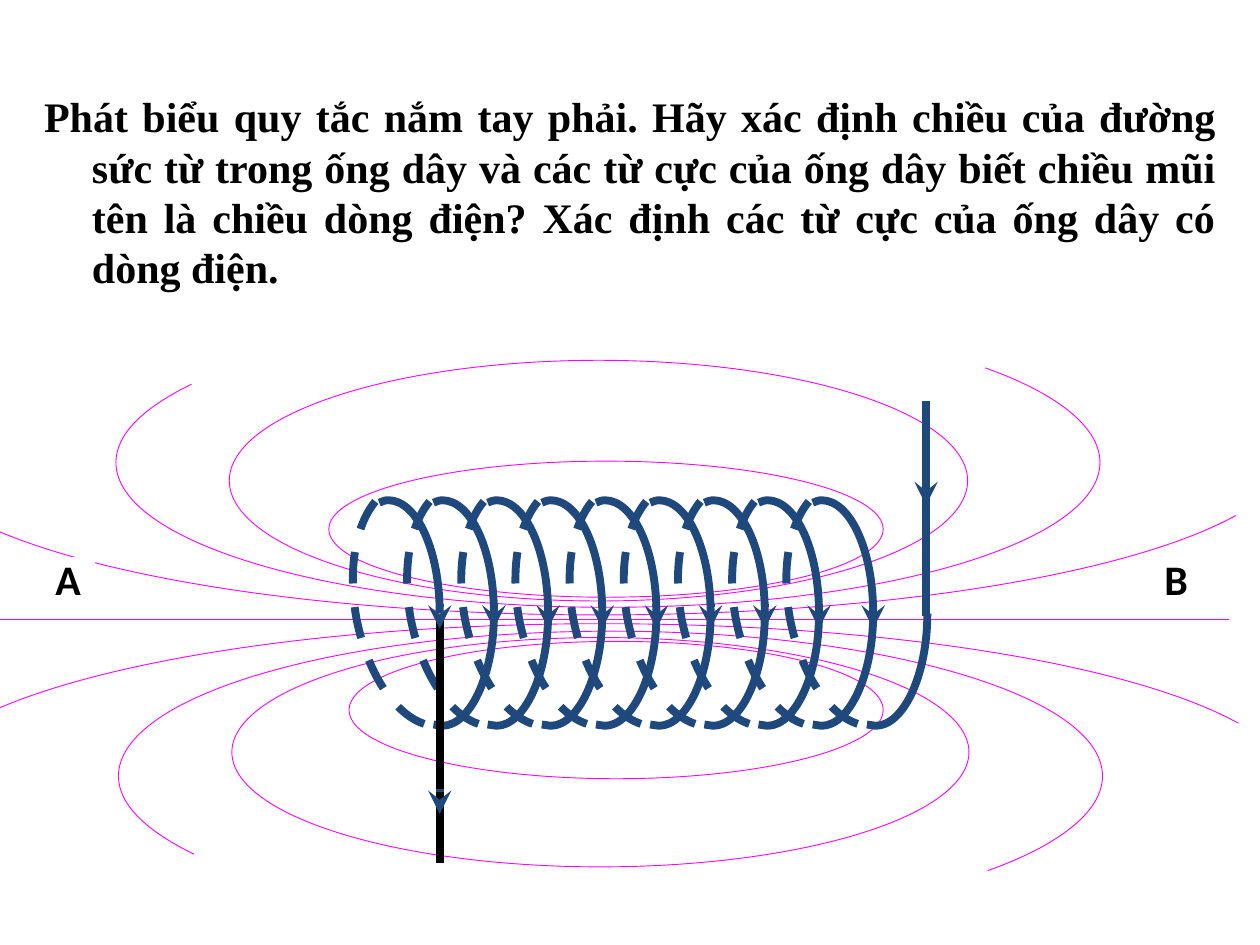
from dataclasses import dataclass

from lxml.etree import SubElement
from pptx import Presentation
from pptx.dml.color import RGBColor
from pptx.enum.dml import MSO_LINE
from pptx.enum.shapes import MSO_CONNECTOR, MSO_SHAPE
from pptx.enum.text import MSO_ANCHOR, MSO_AUTO_SIZE, PP_ALIGN
from pptx.oxml.ns import qn
from pptx.util import Inches, Pt


@dataclass(frozen=True)
class Theme:
    field: RGBColor = RGBColor(0xFF, 0x00, 0xFF)
    coil: RGBColor = RGBColor(0x1F, 0x49, 0x7D)
    black: RGBColor = RGBColor(0, 0, 0)
    white: RGBColor = RGBColor(0xFF, 0xFF, 0xFF)
    field_width: float = 0.5
    coil_width: float = 4.5
    label_width: float = 0.75
    text_size: int = 24
    question_font: str = "Times New Roman"
    label_font: str = "Calibri"


THEME = Theme()
QUESTION = (
    "Phát biểu quy tắc nắm tay phải. Hãy xác định chiều của đường sức từ "
    "trong ống dây và các từ cực của ống dây biết chiều mũi tên là chiều "
    "dòng điện? Xác định các từ cực của ống dây có dòng điện."
)

# Field curves above the axis: a start point, then three points per Bezier
FIELD_CURVES = [
    [(9.81, 4.09), (8.94, 4.57), (6.96, 4.88), (4.76, 4.88),
     (2.67, 4.88), (0.77, 4.6), (-0.16, 4.15)],
    [(7.82, 2.92), (8.41, 3.13), (8.73, 3.4), (8.73, 3.67),
     (8.73, 4.31), (6.98, 4.82), (4.83, 4.82),
     (2.67, 4.82), (0.92, 4.31), (0.92, 3.67),
     (0.92, 3.45), (1.13, 3.24), (1.52, 3.05)],
]
FIELD_ELLIPSES = [
    (1.82, 2.86, 5.86, 1.91), (2.61, 3.66, 4.4, 1.08),
    (1.84, 5.06, 5.85, 1.82), (2.77, 5.09, 4.24, 1.09),
]
MIRROR_SUM = 9.83  # y above the axis + y below it

# Coil turns, with x relative to the first turn
PITCH = 0.43
TURNS = 9
FRONT_TOP = [(-0.07, 3.99), (-0.05, 3.98), (-0.02, 3.97), (0, 3.97),
             (0.23, 3.97), (0.41, 4.37), (0.41, 4.87)]
FRONT_BOTTOM = [(0.41, 4.87), (0.41, 5.36), (0.22, 5.76), (0, 5.76),
                (-0.02, 5.76), (-0.05, 5.75), (-0.07, 5.75)]
BACK = [(2.98, 3.98), (2.82, 4.17), (2.76, 4.53), (2.83, 4.91),
        (2.93, 5.42), (3.22, 5.79), (3.5, 5.76)]


def shift(points, dx):
    return [(x + dx, y) for x, y in points]


def style_line(line, color, width):
    line.color.rgb = color
    line.width = Pt(width)


def add_curve(shapes, points, color, width, dashed=False):
    """Open Bezier curve: each three segments become one cubic segment."""
    emu = [(Inches(x), Inches(y)) for x, y in points]
    builder = shapes.build_freeform(*emu[0])
    builder.add_line_segments(emu[1:], close=False)
    sp = builder.convert_to_shape()
    outline = next(sp.element.iter(qn("a:path")))
    segments = outline.findall(qn("a:lnTo"))
    for i in range(0, len(segments), 3):
        cubic = SubElement(outline, qn("a:cubicBezTo"))
        for segment in segments[i:i + 3]:
            cubic.append(segment[0])
            outline.remove(segment)
    sp.shadow.inherit = False
    sp.fill.background()
    style_line(sp.line, color, width)
    if dashed:
        sp.line.dash_style = MSO_LINE.DASH


def add_ellipse(shapes, box):
    sp = shapes.add_shape(MSO_SHAPE.OVAL, *map(Inches, box))
    sp.shadow.inherit = False
    sp.fill.background()
    style_line(sp.line, THEME.field, THEME.field_width)


def add_line(shapes, start, end, color, width, arrow=False):
    cxn = shapes.add_connector(MSO_CONNECTOR.STRAIGHT,
                               *map(Inches, start + end))
    style_line(cxn.line, color, width)
    sp_pr = cxn.element.spPr
    if arrow:
        SubElement(sp_pr.find(qn("a:ln")), qn("a:tailEnd"), type="stealth")
    SubElement(sp_pr, qn("a:effectLst"))


def add_arrow(shapes, x, y):
    add_line(shapes, (x, y), (x, y + 0.2), THEME.coil, THEME.coil_width, True)


def format_text(p, text, font, align):
    p.text = text
    p.alignment = align
    f = p.runs[0].font
    f.name, f.size, f.bold = font, Pt(THEME.text_size), True
    f.color.rgb = THEME.black


def add_question(title):
    title.left, title.top = Inches(0.25), Inches(0.67)
    title.width, title.height = Inches(9.5), Inches(1.72)
    tf = title.text_frame
    tf.word_wrap = True
    tf.auto_size = MSO_AUTO_SIZE.NONE
    tf.vertical_anchor = MSO_ANCHOR.TOP
    p = tf.paragraphs[0]
    format_text(p, QUESTION, THEME.question_font, PP_ALIGN.JUSTIFY)
    p_pr = p._p.get_or_add_pPr()
    p_pr.set("marL", str(Inches(0.38)))
    p_pr.set("indent", str(Inches(-0.38)))


def add_field(shapes):
    for y_offset in (-0.04, -0.01):
        add_line(shapes, (y_offset, 4.92), (y_offset + 9.76, 4.92),
                 THEME.field, THEME.field_width)
    for curve in FIELD_CURVES:
        mirrored = [(x + 0.02, MIRROR_SUM - y) for x, y in curve]
        for points in (curve, mirrored):
            add_curve(shapes, points, THEME.field, THEME.field_width)
    for box in FIELD_ELLIPSES:
        add_ellipse(shapes, box)


def add_coil(shapes):
    pen = (THEME.coil, THEME.coil_width)
    # Front halves: the first and last turns run into the wires
    for i in range(TURNS + 1):
        if i == 0:
            points = FRONT_TOP
        elif i == TURNS:
            points = FRONT_BOTTOM
        else:
            points = FRONT_TOP + FRONT_BOTTOM[1:]
        add_curve(shapes, shift(points, 3.08 + i * PITCH), *pen)
    # Hidden back halves
    for i in range(TURNS):
        add_curve(shapes, shift(BACK, i * PITCH), *pen, dashed=True)
    # Wires and current direction
    add_line(shapes, (7.35, 4.89), (7.35, 3.18), *pen)
    add_line(shapes, (3.49, 6.85), (3.49, 4.89), THEME.black, THEME.coil_width)
    add_arrow(shapes, 3.49, 6.26)
    for i in range(TURNS):
        add_arrow(shapes, 3.49 + i * PITCH, 4.79)
    add_arrow(shapes, 7.35, 3.81)


def add_pole_label(shapes, text, left, width):
    sp = shapes.add_shape(MSO_SHAPE.RECTANGLE, Inches(left), Inches(4.43),
                          Inches(width), Inches(0.33))
    sp.shadow.inherit = False
    sp.fill.solid()
    sp.fill.fore_color.rgb = THEME.white
    style_line(sp.line, THEME.white, THEME.label_width)
    tf = sp.text_frame
    tf.word_wrap = False
    tf.vertical_anchor = MSO_ANCHOR.MIDDLE
    format_text(tf.paragraphs[0], text, THEME.label_font, PP_ALIGN.CENTER)


def main():
    prs = Presentation()
    prs.slide_width, prs.slide_height = Inches(10), Inches(7.5)
    s = prs.slides.add_slide(prs.slide_layouts[5])
    add_question(s.shapes.title)
    add_field(s.shapes.add_group_shape().shapes)
    add_coil(s.shapes.add_group_shape().shapes)
    add_pole_label(s.shapes, "A", 0.33, 0.42)
    add_pole_label(s.shapes, "B", 9.17, 0.33)
    prs.save("out.pptx")


if __name__ == "__main__":
    main()
